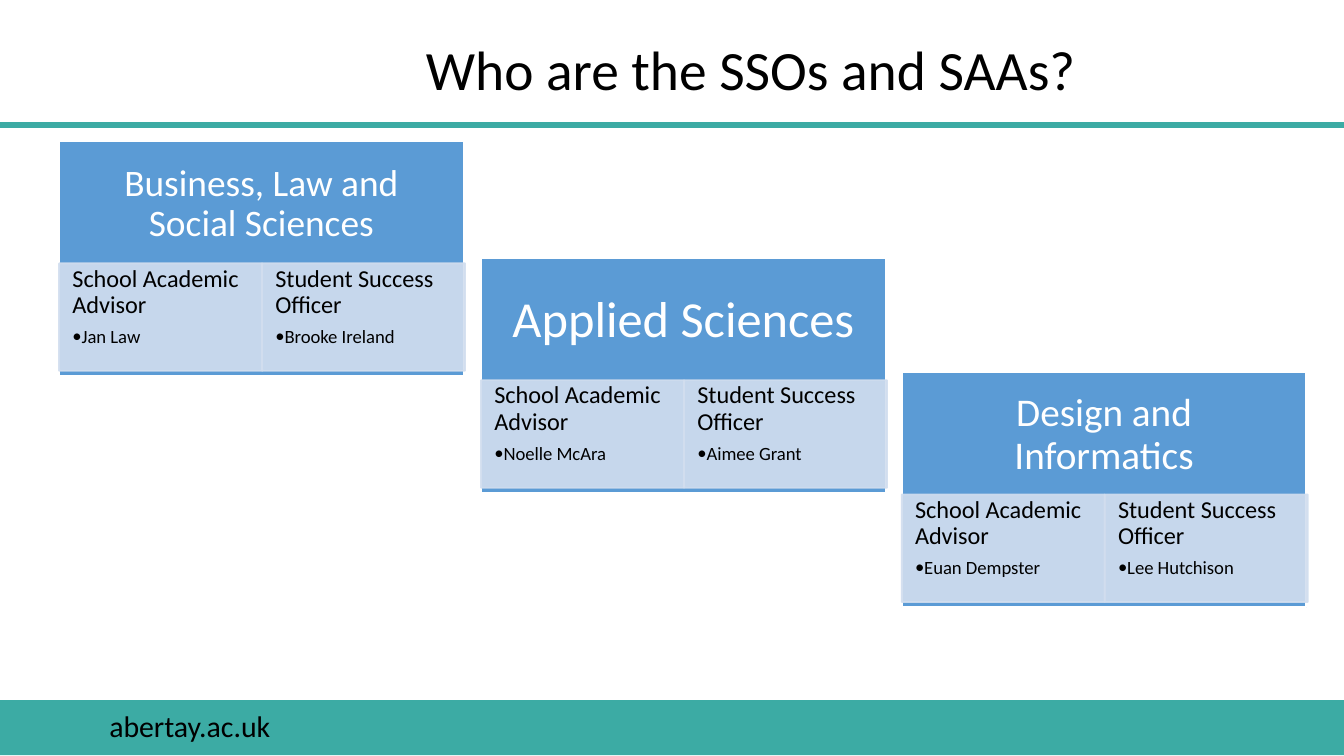
from pptx import Presentation
from pptx.dml.color import RGBColor
from pptx.enum.shapes import MSO_CONNECTOR, MSO_SHAPE
from pptx.enum.text import MSO_ANCHOR, PP_ALIGN
from pptx.oxml.ns import qn
from pptx.util import Inches, Pt
from lxml.etree import SubElement

COLORS = {"teal": "3CABA4", "blue": "5B9BD5", "pale": "D2DEEF",
          "white": "FFFFFF", "black": "000000"}
FONT = "Calibri"


def rgb(name):
    return RGBColor.from_string(COLORS[name])


class SlideBuilder:
    """Holds the style and the slide, or the group, being drawn on."""

    def __init__(self, slide):
        self.slide = slide
        self.shapes = slide.shapes

    def start_group(self):
        self.shapes = self.slide.shapes.add_group_shape().shapes

    def rule(self, y, color, width):
        line = self.shapes.add_connector(
            MSO_CONNECTOR.STRAIGHT, 0, Inches(y), Inches(10), Inches(y))
        line.line.color.rgb = rgb(color)
        line.line.width = Pt(width)
        SubElement(line._element.spPr, qn("a:effectLst"))

    def rect(self, box, fill, line=None, opacity=None):
        sp = self.shapes.add_shape(MSO_SHAPE.RECTANGLE, *map(Inches, box))
        sp.shadow.inherit = False
        sp.fill.solid()
        sp.fill.fore_color.rgb = rgb(fill)
        if line:
            sp.line.color.rgb = rgb(line)
            sp.line.width = Pt(1)
        else:
            sp.line.fill.background()
        if opacity:
            for clr in sp._element.spPr.iter(qn("a:srgbClr")):
                SubElement(clr, qn("a:alpha"), val=str(opacity * 1000))
        return sp

    def text_box(self, box):
        return self.shapes.add_textbox(*map(Inches, box))

    def frame(self, sp, inset=(0.1, 0.05), anchor=MSO_ANCHOR.TOP):
        tf = sp.text_frame
        x, y = map(Inches, inset)
        values = {"word_wrap": True, "vertical_anchor": anchor,
                  "margin_left": x, "margin_right": x,
                  "margin_top": y, "margin_bottom": y}
        for name, value in values.items():
            setattr(tf, name, value)
        return tf

    def paragraph(self, p, text, size, color="black", bullet=False, **fmt):
        if bullet:
            pPr = p._p.get_or_add_pPr()
            pPr.set("marL", str(Inches(0.06)))
            pPr.set("indent", str(Inches(-0.06)))
            SubElement(pPr, qn("a:buFont"), typeface=FONT)
            SubElement(pPr, qn("a:buChar"), char="•")
        values = {"alignment": PP_ALIGN.LEFT, "line_spacing": 0.9, **fmt}
        for name, value in values.items():
            setattr(p, name, value)
        r = p.add_run()
        r.text = text
        for name, value in {"name": FONT, "size": Pt(size)}.items():
            setattr(r.font, name, value)
        r.font.color.rgb = rgb(color)

    def role_panel(self, box, role, person):
        tf = self.frame(self.rect(box, "pale", "pale", 90), (0.1, 0.02))
        self.paragraph(tf.paragraphs[0], role, 13, space_after=Pt(4.5))
        self.paragraph(tf.add_paragraph(), person, 10, bullet=True,
                       level=1, space_after=Pt(1.5))

    def school_card(self, x, y, name, size, inset, people):
        self.start_group()
        self.rect((x, y, 3.01, 1.75), "blue", "white")
        tf = self.frame(self.text_box((x, y, 3.01, 0.94)),
                        (inset, inset), MSO_ANCHOR.MIDDLE)
        self.paragraph(tf.paragraphs[0], name, size, "white",
                       alignment=PP_ALIGN.CENTER)
        for i, (role, person) in enumerate(zip(ROLES, people)):
            self.role_panel((x + 1.51 * i, y + 0.91, 1.51, 0.8), role, person)


ROLES = ("School Academic Advisor", "Student Success Officer")

# left, top, school, title size, title inset, people in role order
SCHOOLS = [
    (0.44, 1.05, "Business, Law and Social Sciences", 20, 0.16,
     ("Jan Law", "Brooke Ireland")),
    (3.58, 1.92, "Applied Sciences", 27, 0.21,
     ("Noelle McAra", "Aimee Grant")),
    (6.71, 2.77, "Design and Informatics", 21, 0.16,
     ("Euan Dempster", "Lee Hutchison")),
]


def main():
    prs = Presentation()
    # 16:9 page
    prs.slide_width = Inches(10)
    prs.slide_height = Inches(10 * 9 / 16)
    s = SlideBuilder(prs.slides.add_slide(prs.slide_layouts[6]))

    # Header rule and footer band
    s.rule(0.93, "teal", 3)
    s.rect((0, 5.21, 10, 0.41), "teal")
    tf = s.frame(s.text_box((-0.74, 5.22, 2.85, 0.37)))
    s.paragraph(tf.paragraphs[0], "abertay.ac.uk", 16,
                alignment=PP_ALIGN.RIGHT, line_spacing=1.0)

    # Title
    tf = s.frame(s.text_box((3.07, 0.3, 6.34, 0.48)),
                 anchor=MSO_ANCHOR.MIDDLE)
    s.paragraph(tf.paragraphs[0], "Who are the SSOs and SAAs?", 29.7)

    # School cards, stepping down to the right
    for school in SCHOOLS:
        s.school_card(*school)

    prs.save("out.pptx")


if __name__ == "__main__":
    main()
